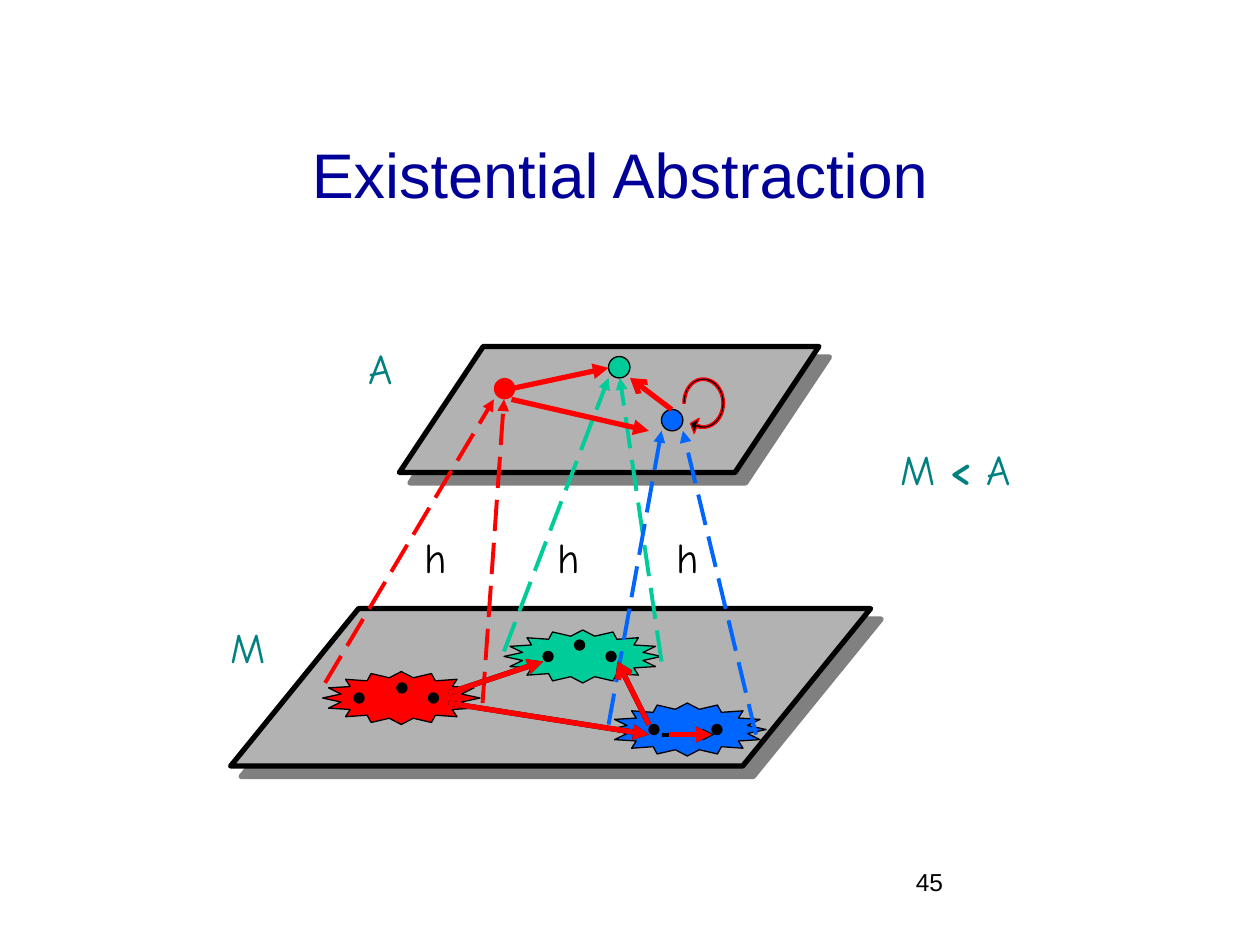
"""Builds the Existential Abstraction slide."""
from lxml.etree import SubElement
from pptx import Presentation
from pptx.dml.color import RGBColor
from pptx.enum.dml import MSO_LINE
from pptx.enum.shapes import MSO_CONNECTOR, MSO_SHAPE
from pptx.enum.text import MSO_ANCHOR, MSO_AUTO_SIZE, PP_ALIGN
from pptx.oxml.ns import qn
from pptx.util import Inches, Pt

PLANE = MSO_SHAPE.FLOWCHART_DATA
STAR = MSO_SHAPE.STAR_16_POINT
OVAL = MSO_SHAPE.OVAL
STRAIGHT = MSO_CONNECTOR.STRAIGHT
DASH = MSO_LINE.LONG_DASH
MIDDLE = MSO_ANCHOR.MIDDLE
CENTER = PP_ALIGN.CENTER
FIT = MSO_AUTO_SIZE.SHAPE_TO_FIT_TEXT

THEME = {
    "title": "000099", "label": "008080", "ink": "000000",
    "plane": "B2B2B2", "shade": "808080",
    "red": "FF0000", "green": "00CC99", "blue": "0066FF",
    "head_size": 36, "label_size": 24, "num_size": 14,
    "plain": "Arial", "hand": "Comic Neue",
}

TITLE = "Existential Abstraction"
NUMBER = "45"
H_LEFTS = [3.27, 4.33, 5.27]
LABELS = [
    ([("M", False)], (1.73, 4.88, 0.5, 0.5)),
    ([("A", False)], (2.83, 2.67, 0.44, 0.5)),
    ([("M ", False), ("<", True), (" A", False)], (7.05, 3.47, 1.14, 0.5)),
]
LOW_PLANE = (1.83, 4.83, 5.08, 1.25)
TOP_PLANE = (3.17, 2.75, 3.33, 1)
STARS = [("green", 4, 5), ("blue", 4.83, 5.58), ("red", 2.56, 5.33)]
NODES = [("blue", 5.25, 3.25, "ink"), ("red", 3.92, 3, None),
         ("green", 4.83, 2.83, "ink")]
DOTS = [(3.4, 5.5), (3.15, 5.42), (2.81, 5.5), (4.31, 5.17), (4.56, 5.08),
        (5.15, 5.75), (5.65, 5.75), (4.81, 5.17)]
MAPS = [
    ("red", (2.58, 5.42), (3.92, 3.17)),
    ("red", (3.83, 5.58), (4, 3.17)),
    ("green", (4, 5.17), (4.83, 3)),
    ("green", (5.25, 5.25), (4.92, 3)),
    ("blue", (4.83, 5.75), (5.25, 3.42)),
    ("blue", (6, 5.83), (5.42, 3.42)),
]
LOW_MOVES = [
    ((3.56, 5.5), (4.31, 5.25), "triangle"),
    ((5.15, 5.75), (4.9, 5.25), "arrow"),
    ((5.31, 5.83), (5.65, 5.83), "triangle"),
    ((3.56, 5.58), (5.15, 5.83), "triangle"),
]
TOP_MOVES = [
    ((4.08, 3.08), (4.83, 2.92), "triangle"),
    ((5.33, 3.25), (5, 3), "arrow"),
    ((4.06, 3.17), (5.15, 3.42), "triangle"),
]
LOOP = [
    (5.53, 3.37),
    (5.55, 3.37, 5.57, 3.38, 5.58, 3.38), (5.66, 3.38, 5.73, 3.3, 5.73, 3.2),
    (5.73, 3.1, 5.66, 3.02, 5.58, 3.02), (5.5, 3.02, 5.44, 3.1, 5.44, 3.2),
    (5.42, 3.2),
    (5.42, 3.09, 5.49, 3, 5.58, 3), (5.68, 3, 5.75, 3.09, 5.75, 3.2),
    (5.75, 3.31, 5.68, 3.4, 5.58, 3.4), (5.56, 3.4, 5.54, 3.4, 5.53, 3.39),
    (5.51, 3.44), (5.48, 3.36), (5.55, 3.32),
]


def tint(name):
    return RGBColor.from_string(THEME[name])


def write(frame, runs, size="label_size", font="hand", color="label",
          align=None):
    para = frame.paragraphs[0]
    if align is not None:
        para.alignment = align
    for text, bold in runs:
        run = para.add_run()
        run.text = text
        run.font.size = Pt(THEME[size])
        run.font.name = THEME[font]
        run.font.bold = bold
        run.font.color.rgb = tint(color)


def label(slide, runs, box, wrap=False, **style):
    frame = slide.shapes.add_textbox(*map(Inches, box)).text_frame
    frame.word_wrap = wrap
    if not wrap:
        frame.auto_size = FIT
    write(frame, runs, **style)


def paint(shape, fill, line="ink", width=0.75):
    shape.shadow.inherit = False
    shape.fill.solid()
    shape.fill.fore_color.rgb = tint(fill)
    if line:
        shape.line.color.rgb = tint(line)
        shape.line.width = Pt(width)
    else:
        shape.line.fill.background()
    return shape


def draw(slide, kind, box, fill, line="ink", width=0.75):
    shape = slide.shapes.add_shape(kind, *map(Inches, box))
    return paint(shape, fill, line, width)


def plane(slide, box):
    shape = draw(slide, PLANE, box, "plane", width=3)
    effects = shape.element.spPr.find(qn("a:effectLst"))
    shade = SubElement(effects, qn("a:outerShdw"), dist=str(Pt(8.5)),
                       dir="2700000", algn="ctr", rotWithShape="0")
    SubElement(shade, qn("a:srgbClr"), val=THEME["shade"])


def arrow(slide, start, end, color, head="triangle", width=3, dash=None):
    link = slide.shapes.add_connector(STRAIGHT, *map(Inches, start + end))
    link.line.color.rgb = tint(color)
    link.line.width = Pt(width)
    if dash is not None:
        link.line.dash_style = dash
    props = link.element.spPr
    SubElement(props.find(qn("a:ln")), qn("a:tailEnd"), type=head)
    SubElement(props, qn("a:effectLst"))


def trace(steps, parts=12):
    points = []
    for step in steps:
        if len(step) == 2:
            points.append(step)
            continue
        knots = [points[-1], step[:2], step[2:4], step[4:]]
        for i in range(1, parts + 1):
            t = i / parts
            mix = ((1 - t) ** 3, 3 * t * (1 - t) ** 2,
                   3 * t * t * (1 - t), t ** 3)
            points.append(tuple(sum(m * k[axis] for m, k in zip(mix, knots))
                                for axis in (0, 1)))
    return [(Inches(x), Inches(y)) for x, y in points]


def main():
    deck = Presentation()
    deck.slide_width, deck.slide_height = Inches(10), Inches(7.5)
    slide = deck.slides.add_slide(deck.slide_layouts[5])

    title = slide.shapes.title
    title.left, title.top = Inches(0.67), Inches(0.75)
    title.width, title.height = Inches(8.5), Inches(1.25)
    title.text_frame.vertical_anchor = MIDDLE
    write(title.text_frame, [(TITLE, False)], size="head_size", font="plain",
          color="title", align=CENTER)
    label(slide, [(NUMBER, False)], (7.17, 6.83, 2.08, 0.5), wrap=True,
          size="num_size", font="plain", color="ink")

    plane(slide, LOW_PLANE)
    for left in H_LEFTS:
        label(slide, [("h", False)], (left, 4.17, 0.39, 0.5), color="ink")
    for color, left, top in STARS:
        star = draw(slide, STAR, (left, top, 1.25, 0.42), color)
        star.adjustments[0] = 0.39
    plane(slide, TOP_PLANE)
    arrow(slide, (5.25, 5.83), (5.67, 5.83), "ink", width=2.25)
    for color, left, top, line in NODES:
        draw(slide, OVAL, (left, top, 0.17, 0.17), color, line)
    for color, start, end in MAPS:
        arrow(slide, start, end, color, width=2.25, dash=DASH)
    for runs, box in LABELS:
        label(slide, runs, box)
    for left, top in DOTS:
        draw(slide, OVAL, (left, top, 0.08, 0.08), "ink")
    for color, moves in (("ink", LOW_MOVES), ("red", LOW_MOVES + TOP_MOVES)):
        for start, end, head in moves:
            arrow(slide, start, end, color, head)

    points = trace(LOOP)
    pen = slide.shapes.build_freeform(*points[0])
    pen.add_line_segments(points[1:], close=True)
    paint(pen.convert_to_shape(), "ink", "red")
    deck.save("out.pptx")


if __name__ == "__main__":
    main()
